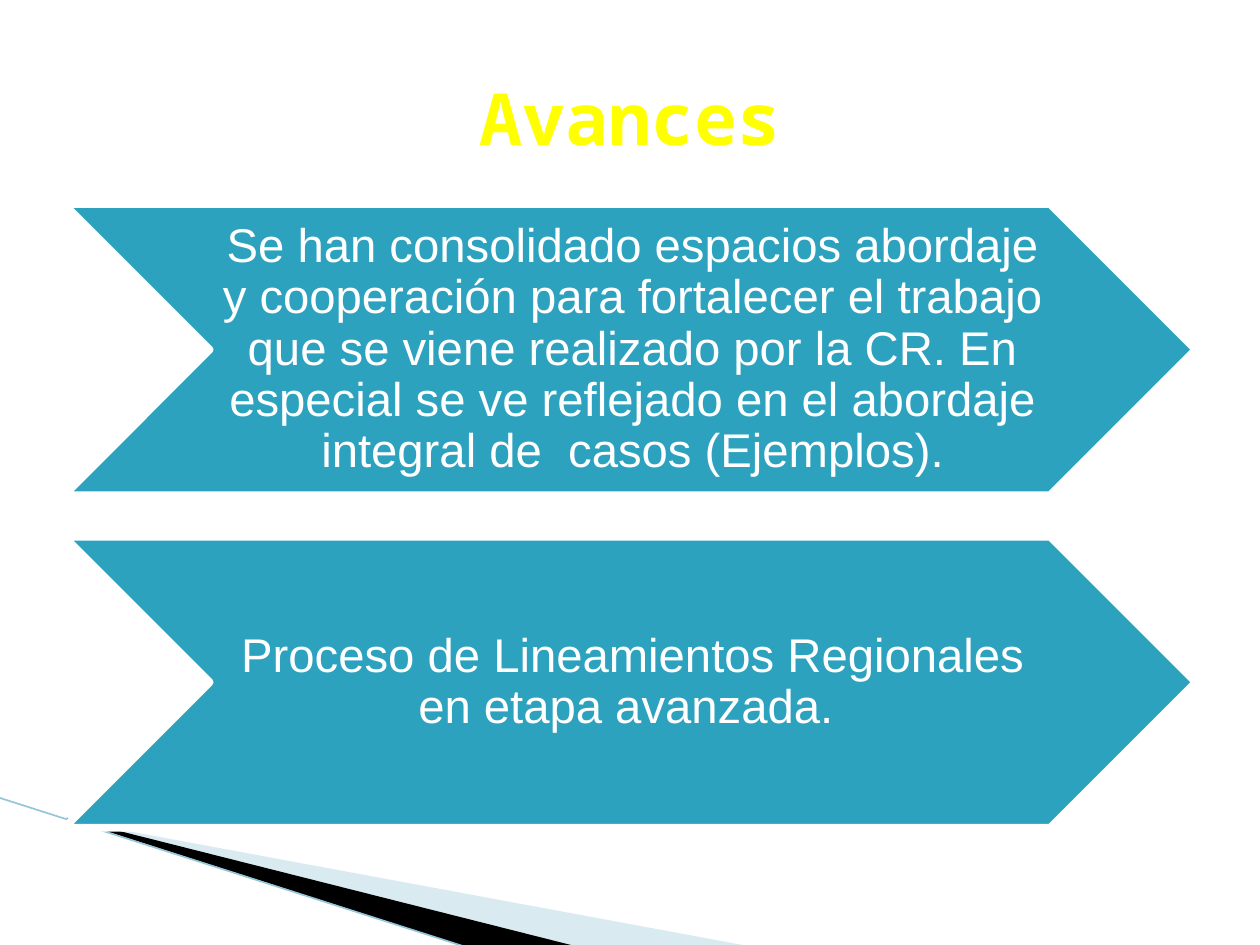
import pptx
import pptx.util
import pptx.dml.color
import pptx.enum.shapes
import pptx.enum.text
import pptx.oxml.ns
import lxml.etree

Inches = pptx.util.Inches
Pt = pptx.util.Pt
RGBColor = pptx.dml.color.RGBColor
MIDDLE = pptx.enum.text.MSO_ANCHOR.MIDDLE
CENTER = pptx.enum.text.PP_ALIGN.CENTER

WHITE = RGBColor(0xFF, 0xFF, 0xFF)
BLACK = RGBColor(0x00, 0x00, 0x00)
YELLOW = RGBColor(0xFF, 0xFF, 0x00)
TEAL = RGBColor(0x2D, 0xA2, 0xBF)
PALE_BLUE = RGBColor(0xA0, 0xCB, 0xDC)
LINE_BLUE = RGBColor(0x97, 0xC5, 0xD8)

TITLE_FONT = {"name": "Noto Sans Mono", "size": Pt(41), "bold": True}
BODY_FONT = {"name": "Arial", "size": Pt(27), "bold": False}
CHEVRON_FRAME = {
    "margin_left": Inches(0.04),
    "margin_top": Inches(0.02),
    "margin_right": 0,
    "margin_bottom": Inches(0.02),
    "vertical_anchor": MIDDLE,
    "word_wrap": True,
}
ADVANCES = [
    "Se han consolidado espacios abordaje y cooperación para fortalecer el "
    "trabajo que se viene realizado por la CR. En especial se ve reflejado "
    "en el abordaje integral de  casos (Ejemplos).",
    "Proceso de Lineamientos Regionales en etapa avanzada. ",
]


def set_attrs(obj, values):
    for name, value in values.items():
        setattr(obj, name, value)


def write_text(tf, text, font, color):
    p = tf.paragraphs[0]
    p.alignment = CENTER
    r = p.add_run()
    r.text = text
    set_attrs(r.font, font)
    r.font.color.rgb = color
    return p


def add_wedge(s, points, color, alpha=None):
    pts = [(Inches(x), Inches(y)) for x, y in points]
    fb = s.shapes.build_freeform(*pts[0])
    fb.add_line_segments(pts[1:], close=True)
    sp = fb.convert_to_shape()
    sp.shadow.inherit = False
    sp.fill.solid()
    sp.fill.fore_color.rgb = color
    sp.line.fill.background()
    if alpha is not None:
        clr = sp.fill._xPr.find(".//" + pptx.oxml.ns.qn("a:srgbClr"))
        a = lxml.etree.SubElement(clr, pptx.oxml.ns.qn("a:alpha"))
        a.set("val", str(alpha * 1000))


def add_corner(s, left, top):
    def place(*points):
        return [(left + x, top + y) for x, y in points]

    add_wedge(s, place((0.55, 0.18), (5.95, 1.18), (4.56, 1.18), (0.55, 0.17)),
              PALE_BLUE, alpha=40)
    add_wedge(s, place((0.53, 0.16), (4.57, 1.18), (3.72, 1.19), (0.54, 0.17)),
              BLACK)
    (x1, y1), (x2, y2) = place((-0.01, 0), (3.71, 1.19))
    ln = s.shapes.add_connector(
        pptx.enum.shapes.MSO_CONNECTOR.STRAIGHT,
        Inches(x1), Inches(y1), Inches(x2), Inches(y2))
    ln.line.color.rgb = LINE_BLUE
    ln.line.width = Pt(0.95)
    lxml.etree.SubElement(ln._element.spPr, pptx.oxml.ns.qn("a:effectLst"))


def add_title(s, left, top, width, height):
    sp = s.shapes.title
    set_attrs(sp, {"left": Inches(left), "top": Inches(top),
                   "width": Inches(width), "height": Inches(height)})
    sp.text_frame.vertical_anchor = MIDDLE
    write_text(sp.text_frame, "Avances", TITLE_FONT, YELLOW)


def add_chevrons(s, left, top, width, height, gap):
    item_height = (height - gap * (len(ADVANCES) - 1)) / len(ADVANCES)
    for i, text in enumerate(ADVANCES):
        sp = s.shapes.add_shape(
            pptx.enum.shapes.MSO_SHAPE.CHEVRON,
            Inches(left), Inches(top + i * (item_height + gap)),
            Inches(width), Inches(item_height))
        sp.shadow.inherit = False
        sp.fill.solid()
        sp.fill.fore_color.rgb = TEAL
        sp.line.color.rgb = WHITE
        sp.line.width = Pt(4.33)
        set_attrs(sp.text_frame, CHEVRON_FRAME)
        p = write_text(sp.text_frame, text, BODY_FONT, WHITE)
        p.line_spacing = 0.9


def main():
    prs = pptx.Presentation()
    prs.slide_width = Inches(10)
    prs.slide_height = Inches(7.5)
    s = prs.slides.add_slide(prs.slide_layouts[5])
    s.background.fill.solid()
    s.background.fill.fore_color.rgb = WHITE
    add_corner(s, 0, 6.33)
    add_chevrons(s, 0.51, 1.62, 8.98, 4.95, gap=0.33)
    add_title(s, 0.5, 0.3, 9, 1.25)
    prs.save("out.pptx")


if __name__ == "__main__":
    main()
